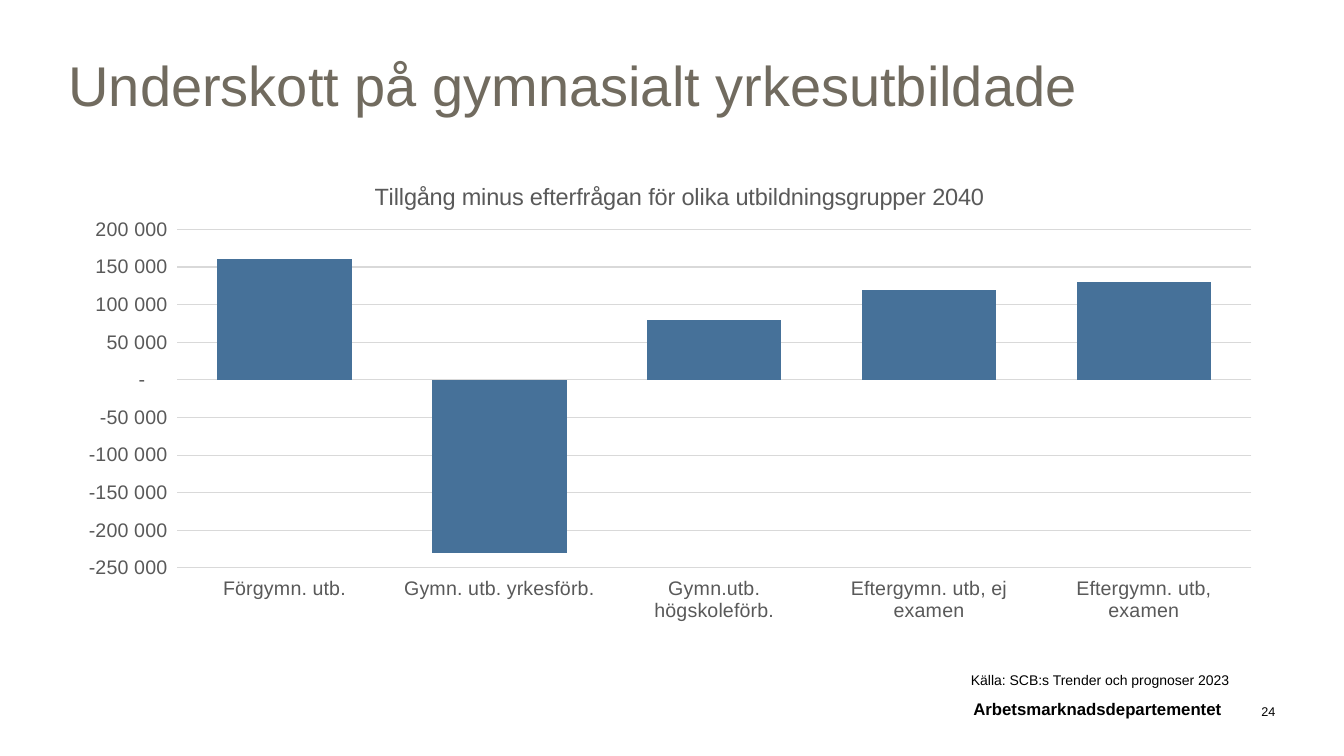
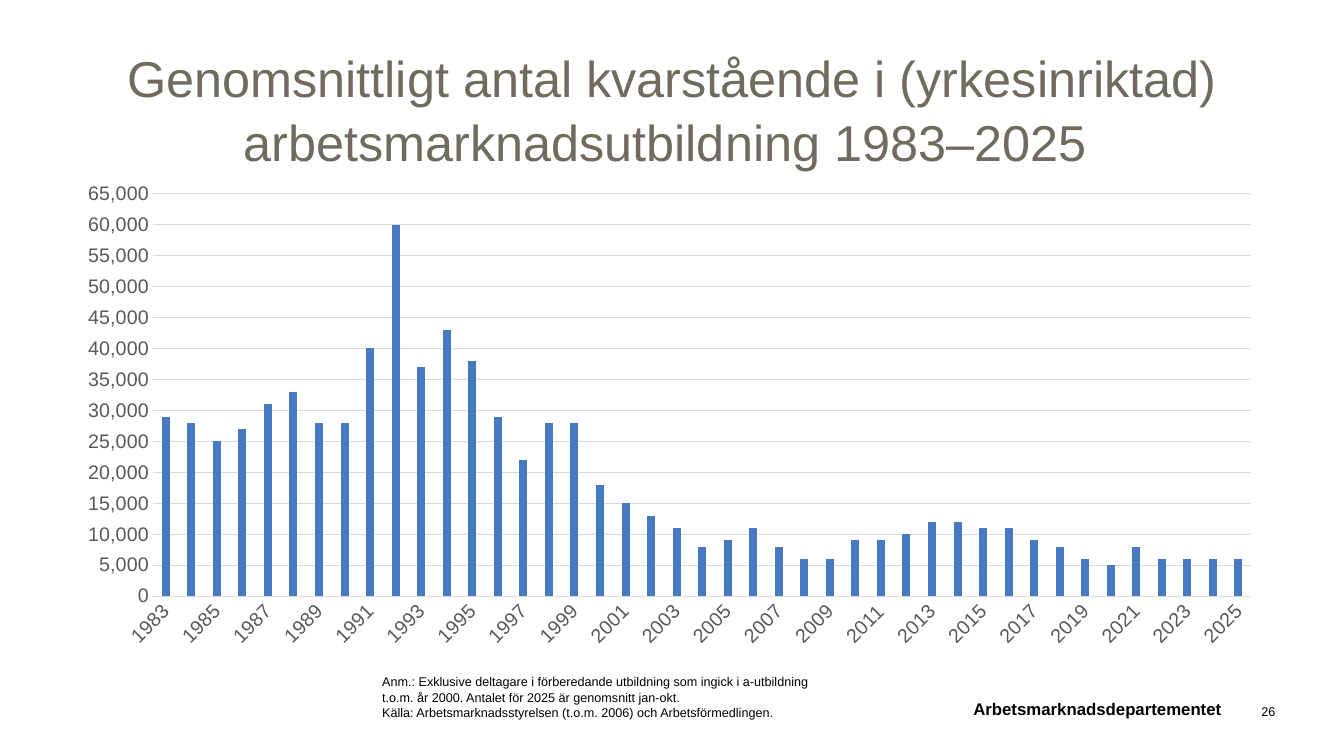
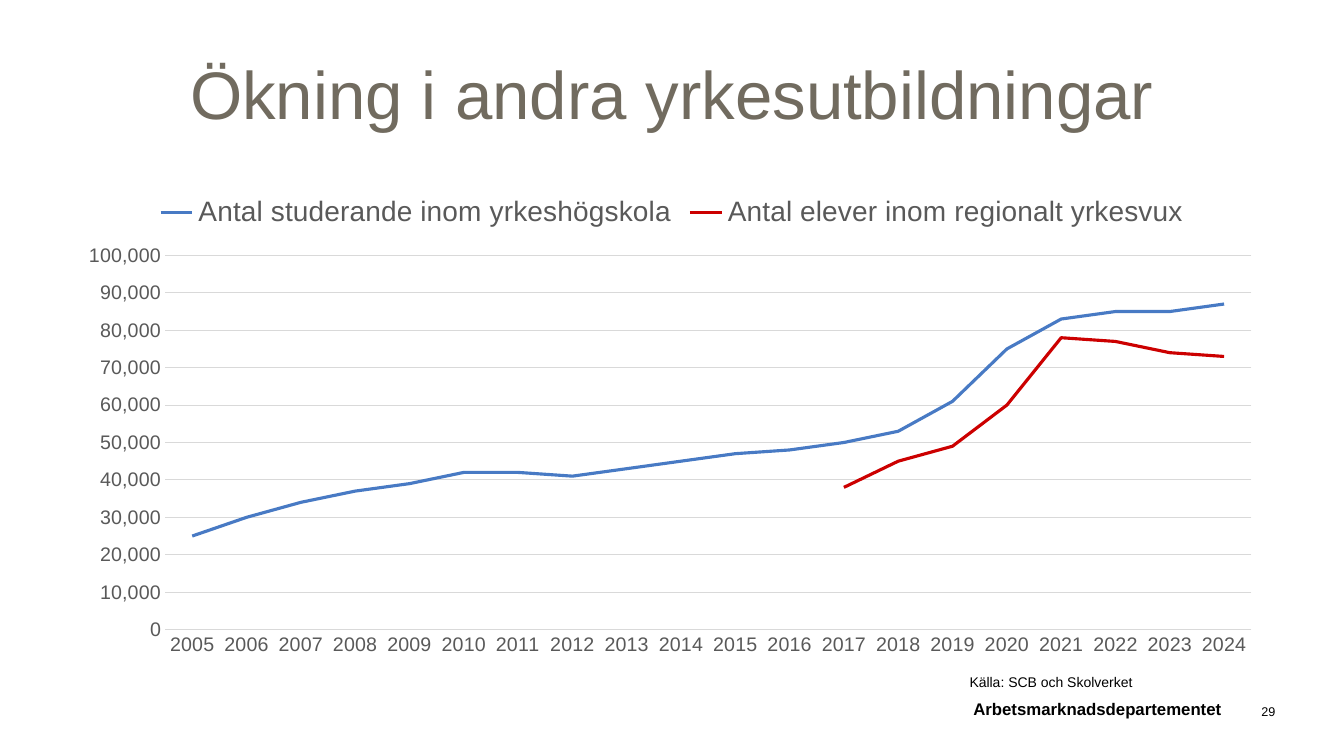
from dataclasses import dataclass
from typing import Optional

from lxml.etree import SubElement
from pptx import Presentation
from pptx.chart.data import CategoryChartData as Data
from pptx.dml.color import RGBColor as RGB
from pptx.enum.chart import XL_CHART_TYPE as Kind
from pptx.enum.chart import XL_LEGEND_POSITION as Legend
from pptx.enum.chart import XL_MARKER_STYLE as Marker
from pptx.enum.chart import XL_TICK_LABEL_POSITION as Label
from pptx.enum.chart import XL_TICK_MARK as Tick
from pptx.enum.text import MSO_ANCHOR as Anchor
from pptx.enum.text import PP_ALIGN as Align
from pptx.oxml.ns import qn
from pptx.util import Inches, Pt

WIDE, HIGH = Inches(13.33), Inches(7.5)
FACE = "Arial"
BLACK = RGB(0, 0, 0)
TAUPE = RGB(0x71, 0x6B, 0x5F)
GREY = RGB(0x59, 0x59, 0x59)
PALE = RGB(0xD9, 0xD9, 0xD9)
STEEL = RGB(0x46, 0x71, 0x99)
BLUE = RGB(0x48, 0x7A, 0xC4)
RED = RGB(0xCC, 0, 0)

LEFT, SPAN = 5.1, 89.8
FOOT, LINE = 91.87, 3.2
OWNER = "Arbetsmarknadsdepartementet"


@dataclass
class Box:
    """A frame in percent of the slide's width and height."""
    x: float
    y: float
    w: float
    h: float

    def emu(self) -> tuple[int, int, int, int]:
        return (int(WIDE * self.x / 100), int(HIGH * self.y / 100),
                int(WIDE * self.w / 100), int(HIGH * self.h / 100))


@dataclass
class Style:
    size: float
    color: RGB = BLACK
    bold: bool = False
    align: Align = Align.LEFT
    anchor: Anchor = Anchor.TOP
    pad: tuple[float, float] = (0.1, 0.05)
    lead: float = 1.0


@dataclass
class Series:
    name: str
    color: RGB
    vals: list[Optional[int]]


@dataclass
class Graph:
    """A chart; plot holds the inner plot area as shares of the chart."""
    kind: Kind
    box: Box
    plot: tuple[float, float, float, float]
    cats: list[str]
    rows: list[Series]
    title: str = ""
    low: Optional[int] = None
    top: Optional[int] = None
    step: Optional[int] = None
    form: str = "#,##0"
    gap: int = 0
    lap: int = 0
    turn: int = 0


@dataclass
class Page:
    num: int
    title: str
    head: Style
    deep: float
    graph: Graph
    note: list[str]
    spot: Box
    small: float = 10


def style(font, size: float, color: RGB, bold: bool = False) -> None:
    font.name, font.size, font.bold = FACE, Pt(size), bold
    font.color.rgb = color


def write(slide, box: Box, lines: list[str], look: Style) -> None:
    frame = slide.shapes.add_textbox(*box.emu()).text_frame
    frame.word_wrap = True
    frame.vertical_anchor = look.anchor
    frame.margin_left = frame.margin_right = Inches(look.pad[0])
    frame.margin_top = frame.margin_bottom = Inches(look.pad[1])
    for i, line in enumerate(lines):
        para = frame.add_paragraph() if i else frame.paragraphs[0]
        para.text = line
        para.alignment = look.align
        para.line_spacing = look.lead
        style(para.font, look.size, look.color, look.bold)


def place(node, index: int, **parts: float) -> None:
    """Give a chart part a fixed layout, in shares of the chart."""
    for old in node.findall(qn("c:layout")):
        node.remove(old)
    lay = node.makeelement(qn("c:layout"))
    node.insert(index, lay)
    hand = SubElement(lay, qn("c:manualLayout"))
    if "w" in parts:
        SubElement(hand, qn("c:layoutTarget")).set("val", "inner")
    for side in "xy":
        SubElement(hand, qn(f"c:{side}Mode")).set("val", "edge")
    for side, share in parts.items():
        SubElement(hand, qn(f"c:{side}")).set("val", str(share))


def set_axes(chart, area, graph: Graph) -> None:
    cat, val = chart.category_axis, chart.value_axis
    for axis in (cat, val):
        axis.major_tick_mark = axis.minor_tick_mark = Tick.NONE
        style(axis.tick_labels.font, 14, GREY)
    cat.format.line.color.rgb = PALE
    cat.format.line.width = Pt(0.75)
    cat.has_major_gridlines = False
    if graph.low is not None:
        cat.tick_label_position = Label.LOW
    if graph.turn:
        text = area.find(qn("c:catAx")).find(qn("c:txPr"))
        body = text.find(qn("a:bodyPr"))
        body.set("rot", str(graph.turn * 60000))
        body.set("vert", "horz")
    val.format.line.fill.background()
    val.minimum_scale, val.maximum_scale = graph.low, graph.top
    val.major_unit = graph.step
    val.has_major_gridlines = True
    val.major_gridlines.format.line.color.rgb = PALE
    val.major_gridlines.format.line.width = Pt(0.75)
    val.tick_labels.number_format = graph.form
    val.tick_labels.number_format_is_linked = False


def draw(slide, graph: Graph) -> None:
    data = Data()
    data.categories = graph.cats
    for row in graph.rows:
        data.add_series(row.name, row.vals)
    chart = slide.shapes.add_chart(graph.kind, *graph.box.emu(), data).chart
    area = next(chart.element.iter(qn("c:plotArea")))
    style(chart.font, 14, BLACK)
    set_axes(chart, area, graph)
    plot = chart.plots[0]
    plot.vary_by_categories = False
    bars = graph.kind == Kind.COLUMN_CLUSTERED
    if bars:
        plot.gap_width, plot.overlap = graph.gap, graph.lap
    for row, ser in zip(graph.rows, plot.series):
        if bars:
            ser.invert_if_negative = False
            ser.format.fill.solid()
            ser.format.fill.fore_color.rgb = row.color
        else:
            ser.smooth = False
            ser.marker.style = Marker.NONE
            ser.format.line.color.rgb = row.color
            ser.format.line.width = Pt(2.25)
    chart.has_legend = len(graph.rows) > 1
    if chart.has_legend:
        chart.legend.position = Legend.TOP
        chart.legend.include_in_layout = False
        style(chart.legend.font, 20, GREY)
    chart.has_title = bool(graph.title)
    if graph.title:
        para = chart.chart_title.text_frame.paragraphs[0]
        para.text = graph.title
        style(para.font, 16.8, GREY)
        title = next(chart.element.iter(qn("c:title")))
        place(title, 1, x=0.25, y=0.05)
    place(area, 0, **dict(zip("xywh", graph.plot)))


def build(deck, page: Page) -> None:
    slide = deck.slides.add_slide(deck.slide_layouts[6])
    write(slide, Box(LEFT, 5.2, SPAN, page.deep), [page.title], page.head)
    draw(slide, page.graph)
    foot = dict(align=Align.RIGHT, anchor=Anchor.BOTTOM, pad=(0, 0))
    write(slide, Box(24.7, FOOT, 66.2, LINE), [OWNER],
          Style(12, bold=True, **foot))
    write(slide, Box(90.9, FOOT, 4, LINE), [str(page.num)], Style(9, **foot))
    write(slide, page.spot, page.note, Style(page.small))


def head(size: float, align: Align = Align.CENTER, lead: float = 1.1) -> Style:
    return Style(size, TAUPE, align=align, pad=(0, 0.05), lead=lead)


def years(first: int, last: int) -> list[str]:
    return [str(year) for year in range(first, last + 1)]


def grand(*vals: int) -> list[int]:
    """Turn thousands into units."""
    return [val * 1000 for val in vals]


GAPS = Graph(
    Kind.COLUMN_CLUSTERED, Box(LEFT, 20.27, SPAN, 63.07),
    (0.09, 0.16, 0.89, 0.71),
    ["Förgymn. utb.", "Gymn. utb. yrkesförb.", "Gymn.utb. högskoleförb.",
     "Eftergymn. utb, ej examen", "Eftergymn. utb, examen"],
    [Series("Series 1", STEEL, grand(160, -230, 80, 120, 130))],
    title="Tillgång minus efterfrågan för olika utbildningsgrupper 2040",
    low=-250000, top=200000, step=50000, gap=60, lap=54,
    form=r'_-* #\ ##0_-;\-* #\ ##0_-;_-* "-"??_-;_-')

COURSE = Graph(
    Kind.COLUMN_CLUSTERED, Box(LEFT, 23.07, SPAN, 64.13),
    (0.07, 0.04, 0.91, 0.83), years(1983, 2025),
    [Series("Series 1", BLUE, grand(
        29, 28, 25, 27, 31, 33, 28, 28, 40, 60, 37, 43, 38, 29, 22,
        28, 28, 18, 15, 13, 11, 8, 9, 11, 8, 6, 6, 9, 9, 10,
        12, 12, 11, 11, 9, 8, 6, 5, 8, 6, 6, 6, 6))],
    top=65000, step=5000, gap=219, lap=-27, turn=-45)

GROWTH = Graph(
    Kind.LINE, Box(LEFT, 24.27, SPAN, 63.47),
    (0.08, 0.15, 0.9, 0.78), years(2005, 2024),
    [Series("Antal studerande inom yrkeshögskola", BLUE, grand(
        25, 30, 34, 37, 39, 42, 42, 41, 43, 45,
        47, 48, 50, 53, 61, 75, 83, 85, 85, 87)),
     Series("Antal elever inom regionalt yrkesvux", RED,
            [None] * 12 + grand(38, 45, 49, 60, 78, 77, 74, 73))])

PAGES = [
    Page(24, "Underskott på gymnasialt yrkesutbildade",
         head(40, Align.LEFT), 15.07, GAPS,
         ["Källa: SCB:s Trender och prognoser 2023"],
         Box(71.5, 88.13, 24.2, 3.6)),
    Page(26, "Genomsnittligt antal kvarstående i (yrkesinriktad) "
         "arbetsmarknadsutbildning 1983–2025 ",
         head(36, lead=1.05), 19.2, COURSE,
         ["Anm.: Exklusive deltagare i förberedande utbildning som ingick i "
          "a-utbildning t.o.m. år 2000. Antalet för 2025 är genomsnitt "
          "jan-okt.",
          "Källa: Arbetsmarknadsstyrelsen (t.o.m. 2006) och "
          "Arbetsförmedlingen."],
         Box(27.7, 88.53, 34.1, 7.47), small=9),
    Page(29, "Ökning i andra yrkesutbildningar", head(48), 15.07, GROWTH,
         ["Källa: SCB och Skolverket"], Box(71.4, 88.4, 15.2, 3.6)),
]


def main() -> None:
    deck = Presentation()
    deck.slide_width, deck.slide_height = WIDE, HIGH
    for page in PAGES:
        build(deck, page)
    deck.save("out.pptx")


if __name__ == "__main__":
    main()
